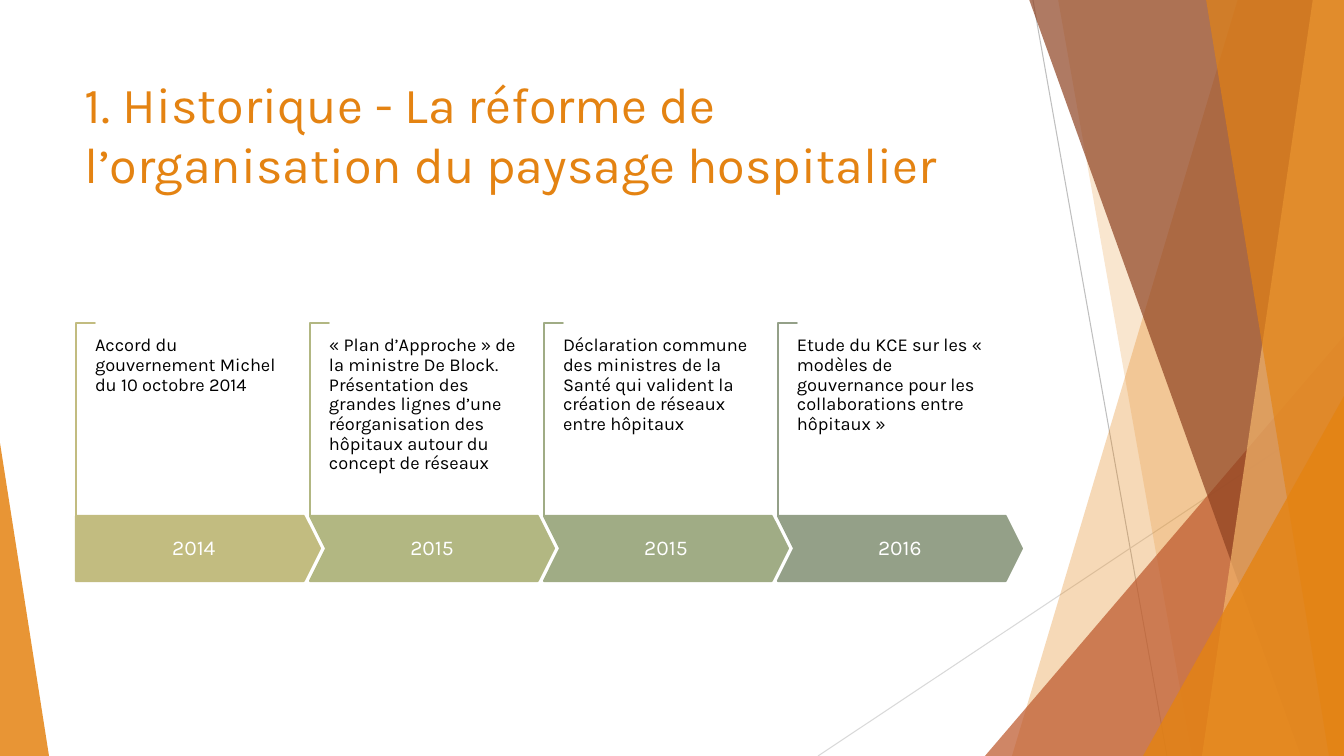
"""Build a timeline slide on the reform of the hospital landscape."""
from dataclasses import dataclass
from typing import Any

from lxml.etree import SubElement
from pptx import Presentation
from pptx.dml.color import RGBColor
from pptx.enum.shapes import MSO_CONNECTOR, MSO_SHAPE
from pptx.enum.text import MSO_ANCHOR, PP_ALIGN
from pptx.oxml.ns import qn
from pptx.util import Pt

PX = 12192000 / 1344
WIDTH, HEIGHT = 1344, 756
STEP_PITCH = 234


@dataclass(frozen=True)
class Theme:
    font: str = "Karla"
    orange: str = "E48312"
    light_orange: str = "F3B56C"
    rust: str = "BD582C"
    brown: str = "8E4221"
    rule_dark: str = "BFBFBF"
    rule_light: str = "D9D9D9"
    white: str = "FFFFFF"
    black: str = "000000"
    title_size: int = 36
    year_size: int = 15
    body_size: int = 13
    step_line: float = 1.5
    rule_line: float = 0.75


@dataclass(frozen=True)
class Rule:
    start: tuple[int, int]
    end: tuple[int, int]
    color: str


@dataclass(frozen=True)
class Band:
    top_x: int
    bottom_x: int
    color: str
    opacity: int


@dataclass(frozen=True)
class Wedge:
    box: tuple[int, int, int, int]
    apex: int
    color: str
    opacity: int


@dataclass(frozen=True)
class Step:
    year: str
    text: str
    color: str
    preset: MSO_SHAPE = MSO_SHAPE.CHEVRON
    text_height: int = 135


THEME = Theme()
RULES = [
    Rule((1033, 0), (1167, HEIGHT), THEME.rule_dark),
    Rule((WIDTH, 406), (818, HEIGHT), THEME.rule_light),
]
FACETS: list[Band | Wedge] = [
    Band(1238, 1012, THEME.orange, 30),
    Band(1058, 1192, THEME.orange, 20),
    Wedge((985, 336, 359, 420), 1, THEME.rust, 72),
    Band(1029, 1301, THEME.brown, 70),
    Band(1313, 1202, THEME.light_orange, 70),
    Band(1206, 1329, THEME.orange, 65),
    Wedge((1143, 396, 201, 360), 1, THEME.orange, 80),
    Wedge((0, 443, 49, 313), 0, THEME.orange, 85),
]
STEPS = [
    Step("2014", "Accord du gouvernement Michel du 10 octobre 2014",
         "C2BC80", MSO_SHAPE.PENTAGON, 169),
    Step("2015", "« Plan d’Approche » de la ministre De Block. Présentation des grandes "
         "lignes d’une réorganisation des hôpitaux autour du concept de réseaux", "B2B782"),
    Step("2015", "Déclaration commune des ministres de la Santé qui valident la création "
         "de réseaux entre hôpitaux", "A0AC85"),
    Step("2016", "Etude du KCE sur les « modèles de gouvernance pour les collaborations "
         "entre hôpitaux »", "94A088"),
]


def emu(*lengths: int) -> list[int]:
    """Turn px lengths into EMU."""
    return [round(n * PX) for n in lengths]


def apply(target: Any, values: dict[str, Any]) -> None:
    """Set each named attribute on the target."""
    for name, value in values.items():
        setattr(target, name, value)


def paint(s: Any, fill: str, line: str | None = None, opacity: int = 100) -> None:
    """Give a shape its fill, outline and opacity, without a shadow."""
    s.shadow.inherit = False
    s.fill.solid()
    s.fill.fore_color.rgb = RGBColor.from_string(fill)
    if opacity < 100:
        color = s._element.spPr.find(qn("a:solidFill"))[0]
        SubElement(color, qn("a:alpha"), val=str(opacity * 1000))
    if line:
        s.line.color.rgb = RGBColor.from_string(line)
        s.line.width = Pt(THEME.step_line)
    else:
        s.line.fill.background()


def write(s: Any, text: str, size: int, color: str, inset: tuple[int, int],
          frame: dict[str, Any], paragraph: dict[str, Any]) -> None:
    """Write one formatted paragraph in a shape."""
    tf = s.text_frame
    x, y = emu(*inset)
    apply(tf, {"word_wrap": True, "margin_left": x, "margin_right": x,
               "margin_top": y, "margin_bottom": y, **frame})
    p = tf.paragraphs[0]
    apply(p, paragraph)
    r = p.add_run()
    r.text = text
    apply(r.font, {"name": THEME.font, "size": Pt(size)})
    r.font.color.rgb = RGBColor.from_string(color)


def draw_rule(shapes: Any, rule: Rule) -> None:
    """Draw a thin background line."""
    c = shapes.add_connector(MSO_CONNECTOR.STRAIGHT, *emu(*rule.start, *rule.end))
    c.line.color.rgb = RGBColor.from_string(rule.color)
    c.line.width = Pt(THEME.rule_line)
    SubElement(c._element.spPr, qn("a:effectLst"))


def draw_facet(shapes: Any, facet: Band | Wedge) -> None:
    """Draw a translucent band or wedge."""
    if isinstance(facet, Band):
        builder = shapes.build_freeform(facet.top_x, -1, scale=PX)
        builder.add_line_segments([(WIDTH, -1), (WIDTH, HEIGHT), (facet.bottom_x, HEIGHT)])
        s = builder.convert_to_shape()
    else:
        s = shapes.add_shape(MSO_SHAPE.ISOSCELES_TRIANGLE, *emu(*facet.box))
        s.adjustments[0] = facet.apex
    paint(s, facet.color, opacity=facet.opacity)


def draw_step(shapes: Any, step: Step, shift: int) -> None:
    """Draw a bracket, a year arrow and the text of one step."""
    bracket = shapes.add_shape(MSO_SHAPE.CORNER, *emu(shift - 11, 410, 193, 19))
    bracket.rotation = 90
    for i in range(2):
        bracket.adjustments[i] = 0.01
    paint(bracket, THEME.white, step.color)

    arrow = shapes.add_shape(step.preset, *emu(shift + 76, 516, 244, 65))
    arrow.adjustments[0] = 0.25
    paint(arrow, step.color, step.color)
    write(arrow, step.year, THEME.year_size, THEME.white, (10, 21),
          {"vertical_anchor": MSO_ANCHOR.MIDDLE},
          {"alignment": PP_ALIGN.CENTER, "line_spacing": 0.9})

    box = shapes.add_textbox(*emu(shift + 95, 336, 198, step.text_height))
    write(box, step.text, THEME.body_size, THEME.black, (0, 0), {}, {"line_spacing": 0.9})


def main() -> None:
    """Build the slide and save it."""
    prs = Presentation()
    prs.slide_width, prs.slide_height = emu(WIDTH, HEIGHT)
    shapes = prs.slides.add_slide(prs.slide_layouts[6]).shapes
    for rule in RULES:
        draw_rule(shapes, rule)
    for facet in FACETS:
        draw_facet(shapes, facet)
    title = shapes.add_textbox(*emu(75, 68, 948, 145))
    write(title, "1. Historique - La réforme de l’organisation du paysage hospitalier",
          THEME.title_size, THEME.orange, (10, 5), {"vertical_anchor": MSO_ANCHOR.TOP}, {})
    for i, step in enumerate(STEPS):
        draw_step(shapes, step, i * STEP_PITCH)
    prs.save("out.pptx")


if __name__ == "__main__":
    main()
